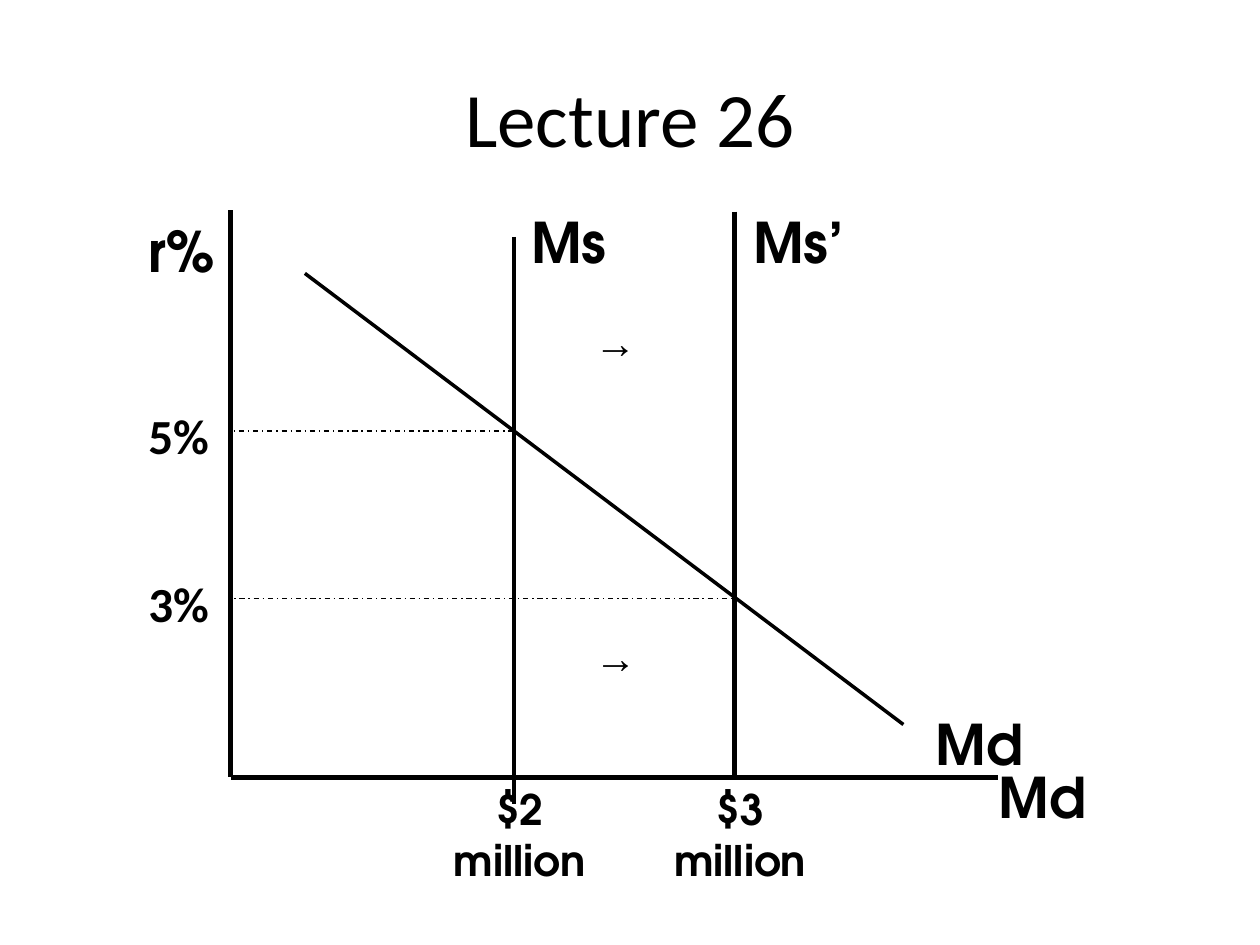
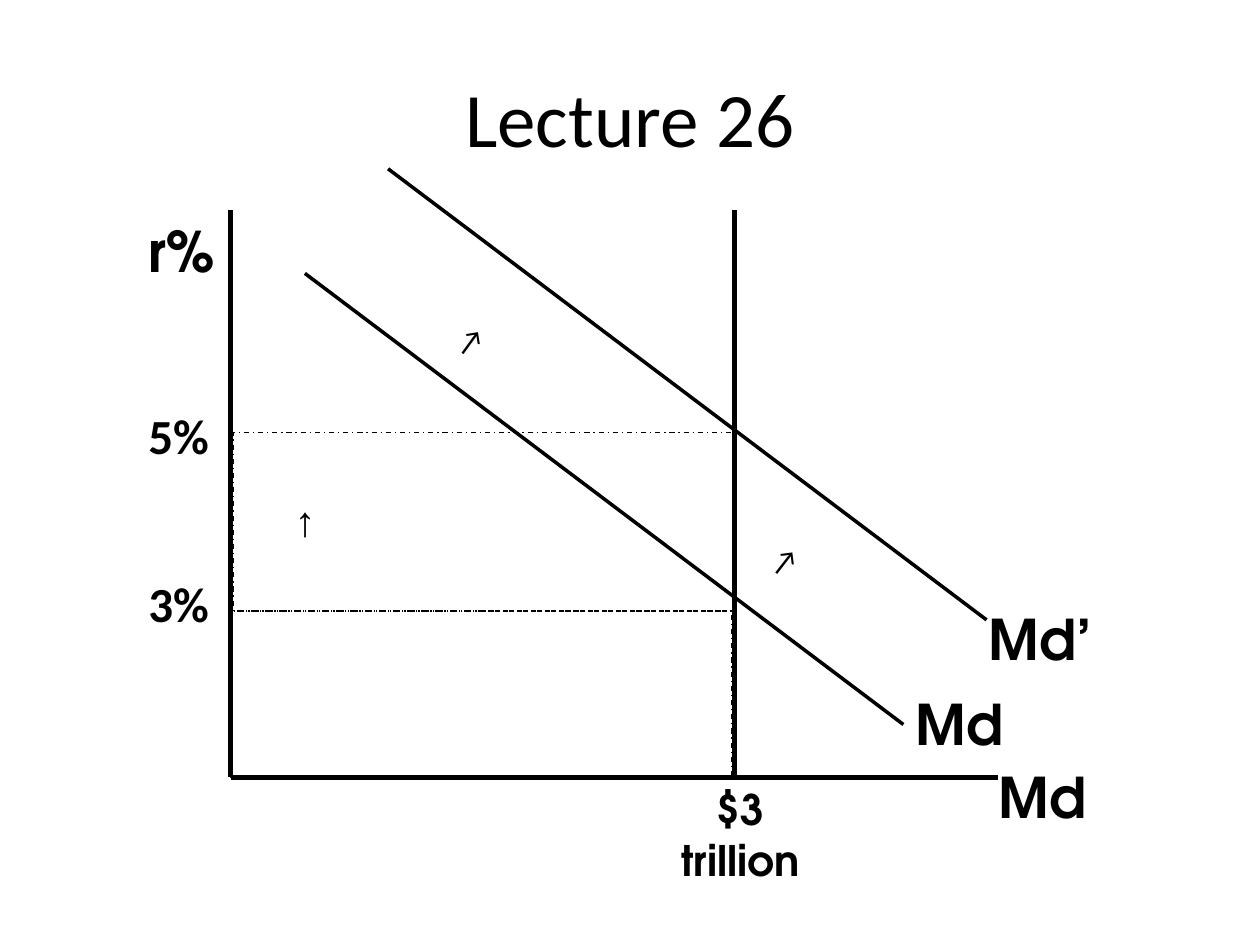
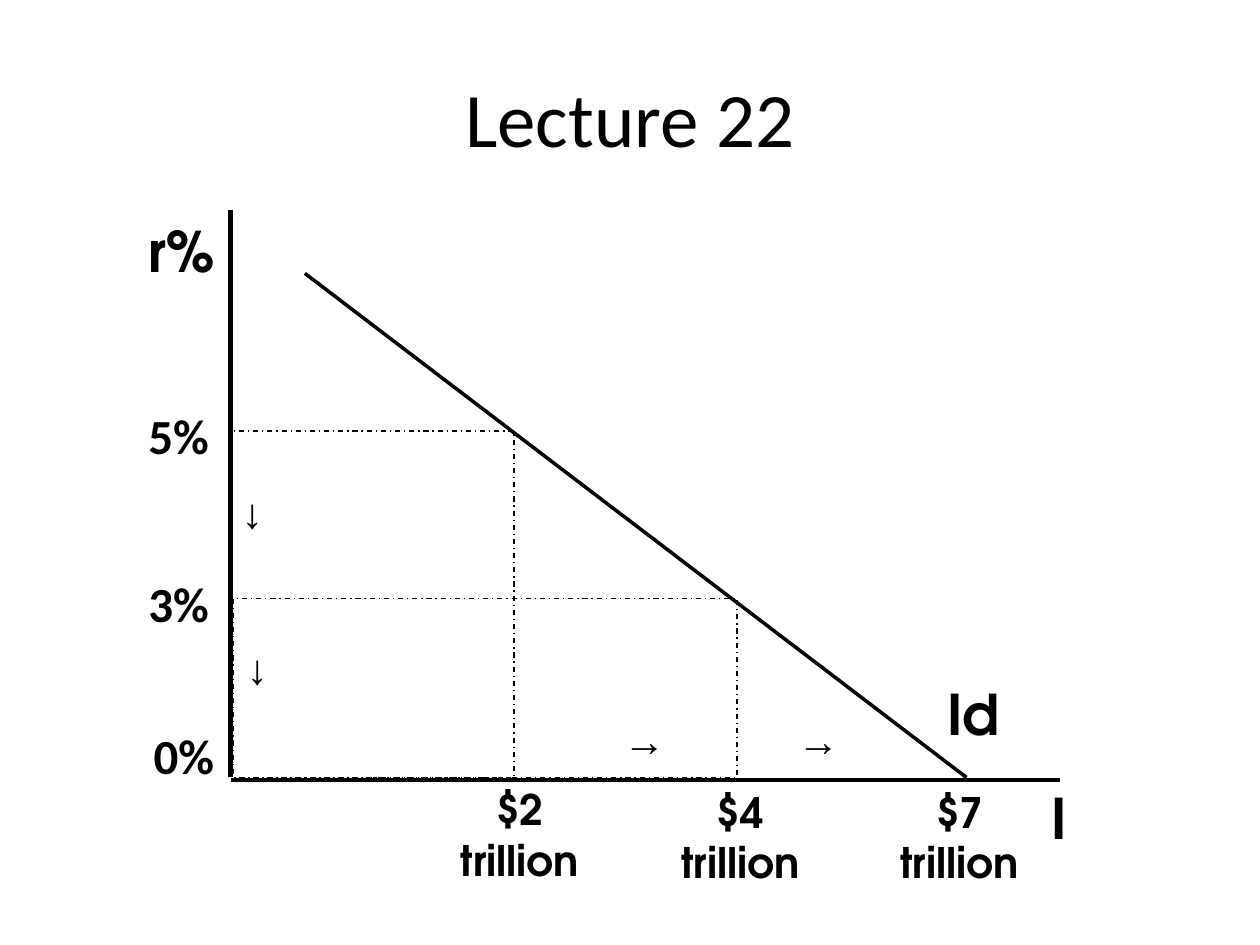
import pptx
import pptx.util
import pptx.dml.color
import pptx.enum.dml
import pptx.enum.shapes
import pptx.enum.text
import pptx.oxml

INK = "000000"
HEADING, LABEL, ARROW = "Calibri", "TeX Gyre Adventor", "Times New Roman"
WIDTH, HEIGHT = 10, 7.5
AXIS_X, AXIS_TOP, BASE = 1.83, 1.67, 6.17
FIRST, SECOND = 4.08, 5.83
HIGH, LOW = 3.42, 4.75
DEMAND = (2.42, 2.17, 7.17, 5.75)
SHIFT_X, SHIFT_Y = 0.66, -0.83
SHIFTED = tuple(end + step for end, step in zip(DEMAND, (SHIFT_X, SHIFT_Y) * 2))
AXIS_WEIGHT, CURVE_WEIGHT, GUIDE_WEIGHT = 2.5, 2, 0.75
RATES = [("5%", 1.08, 3.17), ("3%", 1.08, 4.5)]

SLIDES = [
    {
        "title": "Lecture 26",
        "horizontal_axis": (7.92, BASE),
        "demand": [DEMAND],
        "supply": [(FIRST, 1.88, 6.38), (SECOND, 1.68, 6.18)],
        "guides": [(AXIS_X, HIGH, FIRST, BASE), (AXIS_X, LOW, SECOND, BASE)],
        "names": [("Md", 7.83, 6, 0.92), ("Ms", 4.12, 1.6, 1),
                  ("Md", 7.33, 5.58, 1), ("Ms’", 5.88, 1.6, 1)],
        "rates": RATES,
        "quantities": [("$2 million", 3.5, BASE), ("$3 million", 5.25, BASE)],
        "shifts": [(4.62, 2.46, 0.73, 0), (4.62, 4.96, 0.58, 0)],
        "slanted_shifts": [],
    },
    {
        "title": "Lecture 26",
        "horizontal_axis": (7.92, BASE),
        "demand": [DEMAND, SHIFTED],
        "supply": [(SECOND, AXIS_TOP, BASE)],
        "guides": [(1.85, 3.43, 5.82, 4.85), (AXIS_X, 4.85, 5.81, BASE)],
        "names": [("Md", 7.83, 6, 0.92), ("Md", 7.17, 5.42, 1), ("Md’", 7.75, 4.75, 1.17)],
        "rates": RATES,
        "quantities": [("$3 trillion", 5.25, BASE)],
        "shifts": [(2.08, 3.92, 0.53, 270)],
        "slanted_shifts": [(3.48, 2.47, 0.53, 305.9), (5.93, 4.12, 0.76, 307.8)],
    },
    {
        "title": "Lecture 22",
        "horizontal_axis": (8.41, 6.19),
        "demand": [(2.42, 2.17, 7.67, BASE)],
        "supply": [],
        "guides": [(AXIS_X, HIGH, FIRST, BASE), (1.85, LOW, 5.85, BASE)],
        "names": [("I", 8.25, 6.17, 0.92), ("Id", 7.42, 5.34, 1)],
        "rates": RATES + [("0%", 1.12, 5.71)],
        "quantities": [("$2 trillion", 3.5, BASE), ("$4 trillion", 5.25, 6.19),
                       ("$7 trillion", 6.99, 6.19)],
        "shifts": [(1.79, 3.88, 0.58, 90), (1.83, 5.12, 0.58, 90),
                   (4.85, 5.62, 0.53, 0), (6.23, 5.62, 0.53, 0)],
        "slanted_shifts": [],
    },
]


def color(value):
    return pptx.dml.color.RGBColor.from_string(value)


def inches(*lengths):
    return [pptx.util.Inches(length) for length in lengths]


def stroke(line, weight):
    line.color.rgb = color(INK)
    line.width = pptx.util.Pt(weight)


def draw_line(slide, ends, weight):
    straight = pptx.enum.shapes.MSO_CONNECTOR.STRAIGHT
    segment = slide.shapes.add_connector(straight, *inches(*ends))
    stroke(segment.line, weight)
    segment._element.spPr.append(pptx.oxml.parse_xml(
        '<a:effectLst xmlns:a="http://schemas.openxmlformats.org/drawingml/2006/main"/>'))


def draw_guide(slide, left, top, right, bottom):
    rectangle = pptx.enum.shapes.MSO_SHAPE.RECTANGLE
    guide = slide.shapes.add_shape(rectangle, *inches(left, top, right - left, bottom - top))
    guide.shadow.inherit = False
    guide.fill.background()
    stroke(guide.line, GUIDE_WEIGHT)
    guide.line.dash_style = pptx.enum.dml.MSO_LINE.DASH_DOT


def write(slide, text, box, size, font, bold=False, centered=False, wrap=True, angle=0):
    label = slide.shapes.add_textbox(*inches(*box))
    label.rotation = angle
    frame = label.text_frame
    frame.word_wrap = wrap
    frame.auto_size = pptx.enum.text.MSO_AUTO_SIZE.SHAPE_TO_FIT_TEXT
    paragraph = frame.paragraphs[0]
    paragraph.text = text
    if centered:
        paragraph.alignment = pptx.enum.text.PP_ALIGN.CENTER
    paragraph.font.name = font
    paragraph.font.size = pptx.util.Pt(size)
    paragraph.font.bold = bold
    paragraph.font.color.rgb = color(INK)
    return frame


def write_title(slide, text):
    frame = write(slide, text, (0.5, 0.3, WIDTH - 1, 1.25), 44, HEADING, centered=True)
    frame.auto_size = pptx.enum.text.MSO_AUTO_SIZE.NONE
    frame.vertical_anchor = pptx.enum.text.MSO_ANCHOR.MIDDLE


def draw_market(slide, market):
    axis_end, axis_y = market["horizontal_axis"]
    draw_line(slide, (AXIS_X, AXIS_TOP, AXIS_X, BASE), AXIS_WEIGHT)
    draw_line(slide, (AXIS_X, axis_y, axis_end, axis_y), AXIS_WEIGHT)
    for curve in market["demand"]:
        draw_line(slide, curve, CURVE_WEIGHT)
    for quantity, top, bottom in market["supply"]:
        draw_line(slide, (quantity, top, quantity, bottom), AXIS_WEIGHT)
    for guide in market["guides"]:
        draw_guide(slide, *guide)

    write_title(slide, market["title"])
    write(slide, "r%", (1.08, AXIS_TOP, 0.75, 0.63), 32, LABEL, bold=True)
    for name, left, top, width in market["names"]:
        write(slide, name, (left, top, width, 0.64), 32, LABEL, bold=True)
    for rate, left, top in market["rates"]:
        write(slide, rate, (left, top, 0.75, 0.57), 28, HEADING, bold=True, wrap=False)
    for quantity, left, top in market["quantities"]:
        write(slide, quantity, (left, top, 1.25, 0.91), 24, LABEL, bold=True, centered=True)
    for key, height, size, font in (("shifts", 0.5, 24, ARROW),
                                    ("slanted_shifts", 0.4, 18, HEADING)):
        for left, top, width, angle in market[key]:
            write(slide, "→", (left, top, width, height), size, font, angle=angle)


def main():
    deck = pptx.Presentation()
    deck.slide_width, deck.slide_height = inches(WIDTH, HEIGHT)
    for market in SLIDES:
        draw_market(deck.slides.add_slide(deck.slide_layouts[6]), market)
    deck.save("out.pptx")


if __name__ == "__main__":
    main()
